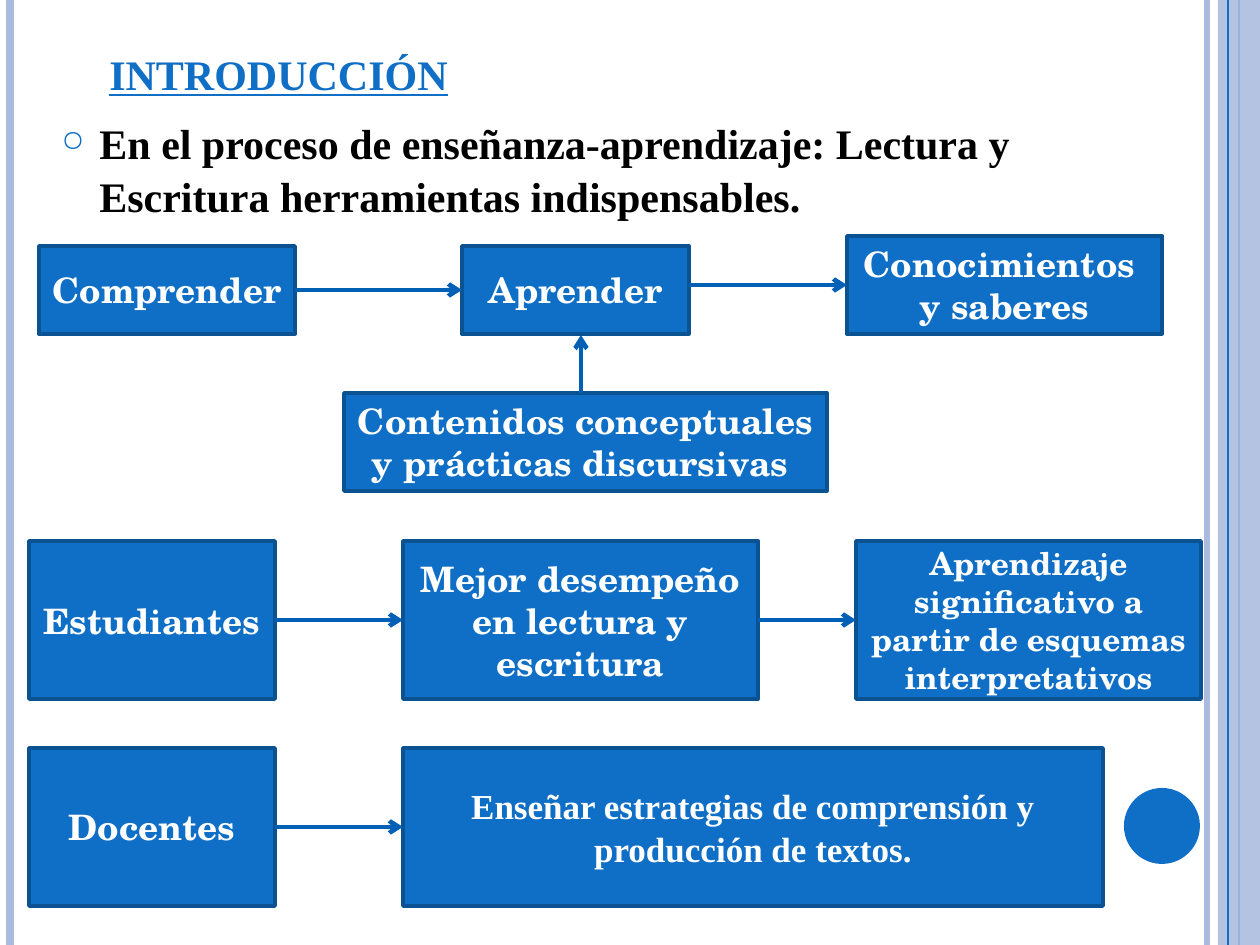
from lxml import etree
from pptx import Presentation
from pptx import util as u
from pptx.dml.color import RGBColor
from pptx.enum import shapes, text
from pptx.oxml.ns import qn

PX = 914400 // 126
SERIF, BOOK = "Times New Roman", "TeX Gyre Schola"
COLORS = {"blue": "0F6FC6", "edge": "0B5292", "arrow": "0060B6",
          "pale": "ABBBDF", "white": "FFFFFF", "black": "000000"}
RGB = {name: RGBColor.from_string(code) for name, code in COLORS.items()}

prs = Presentation()
prs.slide_width, prs.slide_height = 1260 * PX, 945 * PX
slide = prs.slides.add_slide(prs.slide_layouts[5])
items = slide.shapes


def style(frame, font, size, color):
    for par in frame.paragraphs:
        for run in par.runs:
            run.font.name, run.font.size = font, u.Pt(size)
            run.font.bold, run.font.color.rgb = True, RGB[color]


def link(x1, y1, x2, y2, color, width):
    line = items.add_connector(shapes.MSO_CONNECTOR.STRAIGHT,
                               x1 * PX, y1 * PX, x2 * PX, y2 * PX)
    line.line.color.rgb, line.line.width = RGB[color], u.Pt(width)
    etree.SubElement(line._element.spPr, qn("a:effectLst"))
    return line


# Side rules, band and dot
for x, color, width in [(1207, "pale", 3), (10, "pale", 4.5), (1239, "blue", 1.5)]:
    link(x, 0, x, 945, color, width)
band = items.add_shape(shapes.MSO_SHAPE.RECTANGLE, 1218 * PX, 0, 42 * PX, 945 * PX)
dot = items.add_shape(shapes.MSO_SHAPE.OVAL, 1124 * PX, 788 * PX, 76 * PX, 76 * PX)
for part, color in [(band, "pale"), (dot, "blue")]:
    part.shadow.inherit = False
    part.fill.solid()
    part.fill.fore_color.rgb = RGB[color]
    part.line.fill.background()
tint = band._element.spPr.find(".//" + qn("a:srgbClr"))
etree.SubElement(tint, qn("a:alpha"), val="87000")
link(1228, 0, 1228, 945, "blue", 0.75)

# Title
title = items.title
title.left, title.top, title.width, title.height = 59 * PX, 29 * PX, 439 * PX, 76 * PX
frame = title.text_frame
frame.text = "INTRODUCCIÓN"
frame.vertical_anchor = text.MSO_ANCHOR.BOTTOM
frame.paragraphs[0].alignment = text.PP_ALIGN.CENTER
style(frame, SERIF, 24, "blue")
frame.paragraphs[0].runs[0].font.underline = True

# Opening bullet
frame = items.add_textbox(49 * PX, 108 * PX, 1132 * PX, 115 * PX).text_frame
frame.word_wrap = True
frame.text = ("En el proceso de enseñanza-aprendizaje: Lectura y "
              "Escritura herramientas indispensables.")
style(frame, SERIF, 24, "black")
par = frame.paragraphs[0]
par.line_spacing = 1.06
props = par._p.get_or_add_pPr()
props.set("marL", str(38 * PX))
props.set("indent", str(-38 * PX))
tone = etree.SubElement(props, qn("a:buClr"))
etree.SubElement(tone, qn("a:srgbClr"), val=COLORS["blue"])
etree.SubElement(props, qn("a:buSzPct"), val="70000")
etree.SubElement(props, qn("a:buChar"), char="○")

# Boxes: key, left, top, width, height, font, size, text
BOXES = [
    ("grasp", 39, 246, 256, 88, BOOK, 20, "Comprender"),
    ("learn", 462, 246, 227, 88, BOOK, 20, "Aprender"),
    ("know", 847, 236, 315, 98, BOOK, 20, "Conocimientos \ny saberes"),
    ("topics", 344, 393, 483, 98, BOOK, 20,
     "Contenidos conceptuales y prácticas discursivas "),
    ("pupils", 29, 541, 246, 158, BOOK, 20, "Estudiantes"),
    ("better", 403, 541, 355, 158, BOOK, 20, "Mejor desempeño en lectura y escritura"),
    ("deep", 856, 541, 345, 158, BOOK, 18,
     "Aprendizaje significativo a partir de esquemas interpretativos"),
    ("staff", 29, 748, 246, 158, BOOK, 20, "Docentes"),
    ("teach", 403, 748, 700, 158, SERIF, 20,
     "Enseñar estrategias de comprensión y producción de textos."),
]
boxes = {}
for key, x, y, w, h, font, size, words in BOXES:
    box = items.add_shape(shapes.MSO_SHAPE.RECTANGULAR_CALLOUT,
                          x * PX, y * PX, w * PX, h * PX)
    box.adjustments[0], box.adjustments[1] = -0.21, 0.5
    box.shadow.inherit = False
    box.fill.solid()
    box.fill.fore_color.rgb = RGB["blue"]
    box.line.color.rgb, box.line.width = RGB["edge"], u.Pt(2)
    frame = box.text_frame
    frame.text, frame.word_wrap = words, True
    frame.margin_left = frame.margin_right = 11 * PX
    frame.vertical_anchor = text.MSO_ANCHOR.MIDDLE
    for par in frame.paragraphs:
        par.alignment = text.PP_ALIGN.CENTER
    style(frame, font, size, "white")
    boxes[key] = box

# Arrows between boxes, the last two with free ends
arrows = []
for start, end in [("grasp", "learn"), ("pupils", "better"),
                   ("better", "deep"), ("staff", "teach")]:
    arrow = link(0, 0, 0, 0, "arrow", 2.5)
    arrow.begin_connect(boxes[start], 3)
    arrow.end_connect(boxes[end], 1)
    arrows.append(arrow)
arrow = link(689, 285, 847, 285, "arrow", 2.5)
arrow.end_connect(boxes["know"], 1)
arrows += [arrow, link(581, 393, 581, 335, "arrow", 2.5)]
for arrow in arrows:
    etree.SubElement(arrow.line._get_or_add_ln(), qn("a:tailEnd"), type="arrow")

prs.save("out.pptx")
